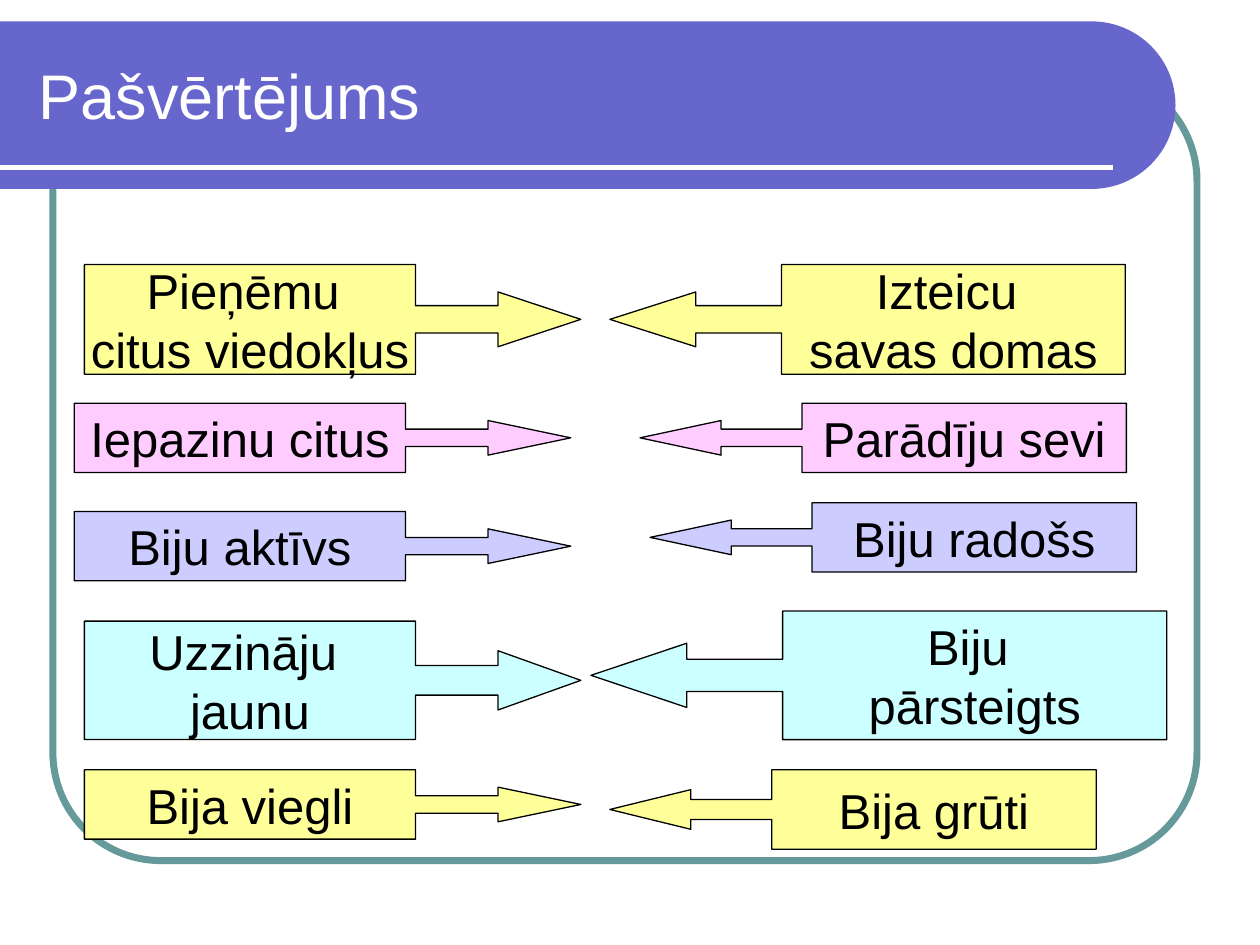
from math import cos, pi, sin

from lxml import etree
from pptx import Presentation
from pptx.dml.color import RGBColor
from pptx.enum.shapes import MSO_CONNECTOR, MSO_SHAPE
from pptx.enum.text import MSO_ANCHOR, PP_ALIGN
from pptx.oxml.ns import qn
from pptx.util import Inches, Pt

RIGHT_CALLOUT = MSO_SHAPE.RIGHT_ARROW_CALLOUT
LEFT_CALLOUT = MSO_SHAPE.LEFT_ARROW_CALLOUT
ROUNDED = MSO_SHAPE.ROUNDED_RECTANGLE
STRAIGHT = MSO_CONNECTOR.STRAIGHT
MIDDLE = MSO_ANCHOR.MIDDLE
CENTER, LEFT = PP_ALIGN.CENTER, PP_ALIGN.LEFT

THEME = {
    "font": "Arial", "title_size": 36, "callout_size": 28,
    "white": "FFFFFF", "black": "000000",
    "frame": "669999", "banner": "6666CC",
    "yellow": "FFFF99", "pink": "FFCCFF", "lilac": "CCCCFF", "aqua": "CCFFFF",
}

TITLE = "Pašvērtējums"
# One row per colour: (lines, (left, top, width, height)) pointing right, then left
ROWS = [
    ("yellow", (["Pieņēmu ", "citus viedokļus"], (0.67, 2.1, 3.94, 0.87)),
               (["Izteicu ", "savas domas"], (4.84, 2.1, 4.09, 0.87))),
    ("pink", (["Iepazinu citus"], (0.59, 3.2, 3.94, 0.55)),
             (["Parādīju sevi"], (5.08, 3.2, 3.86, 0.55))),
    ("lilac", (["Biju aktīvs"], (0.59, 4.06, 3.94, 0.55)),
              (["Biju radošs"], (5.16, 3.99, 3.86, 0.55))),
    ("aqua", (["Uzzināju ", "jaunu"], (0.67, 4.93, 3.94, 0.94)),
             (["Biju ", "pārsteigts"], (4.69, 4.85, 4.57, 1.02))),
    ("yellow", (["Bija viegli"], (0.67, 6.11, 3.94, 0.55)),
               (["Bija grūti"], (4.84, 6.11, 3.86, 0.63))),
]


def color(name):
    return RGBColor.from_string(THEME[name])


def style(shape, fill=None, line=None, weight=0.75):
    shape.shadow.inherit = False
    if fill:
        shape.fill.solid()
        shape.fill.fore_color.rgb = color(fill)
    else:
        shape.fill.background()
    if line:
        shape.line.color.rgb = color(line)
        shape.line.width = Pt(weight)
    else:
        shape.line.fill.background()


def write(shape, lines, size, ink, align=CENTER, wrap=False):
    frame = shape.text_frame
    frame.word_wrap = wrap
    frame.vertical_anchor = MIDDLE
    for index, line in enumerate(lines):
        para = frame.paragraphs[0] if index == 0 else frame.add_paragraph()
        para.alignment = align
        span = para.add_run()
        span.text = line
        span.font.name = THEME["font"]
        span.font.size = Pt(THEME[size])
        span.font.color.rgb = color(ink)


def add_frame(page):
    frame = page.shapes.add_shape(
        ROUNDED, *map(Inches, (0.42, 0.58, 9.08, 6.25)))
    frame.adjustments[0] = 0.137
    style(frame, line="frame", weight=4)


def add_banner(page, top=0.17, bottom=1.5, right=9.33, steps=48):
    """Draw a band from the left edge that ends in a half circle."""
    radius = (bottom - top) / 2
    center_x, center_y = right - radius, top + radius
    angles = [pi * step / steps - pi / 2 for step in range(steps + 1)]
    arc = [(Inches(center_x + radius * cos(angle)),
            Inches(center_y + radius * sin(angle))) for angle in angles]
    builder = page.shapes.build_freeform(0, Inches(top))
    builder.add_line_segments(arc + [(0, Inches(bottom))], close=True)
    style(builder.convert_to_shape(), fill="banner")


def add_rule(page):
    rule = page.shapes.add_connector(
        STRAIGHT, *map(Inches, (0, 1.33, 8.83, 1.33)))
    rule.line.color.rgb = color("white")
    rule.line.width = Pt(3)
    etree.SubElement(rule._element.spPr, qn("a:effectLst"))


def add_title(page):
    box = page.shapes.add_textbox(*map(Inches, (0.21, 0.25, 8.77, 1)))
    write(box, [TITLE], "title_size", "white", align=LEFT, wrap=True)


def add_callout(page, kind, lines, place, fill):
    """Add a box whose arrowhead takes one sixth of the whole width."""
    callout = page.shapes.add_shape(kind, *map(Inches, place))
    width, height = place[2:]
    for index, value in enumerate((0.25, 0.25, width / height / 6, 0.667)):
        callout.adjustments[index] = value
    style(callout, fill=fill, line="black")
    write(callout, lines, "callout_size", "black")


def main():
    deck = Presentation()
    deck.slide_width, deck.slide_height = Inches(10), Inches(7.5)
    page = deck.slides.add_slide(deck.slide_layouts[6])
    add_frame(page)
    add_banner(page)
    add_rule(page)
    add_title(page)
    for fill, *pair in ROWS:
        for kind, (lines, place) in zip((RIGHT_CALLOUT, LEFT_CALLOUT), pair):
            add_callout(page, kind, lines, place, fill)
    deck.save("out.pptx")


if __name__ == "__main__":
    main()
